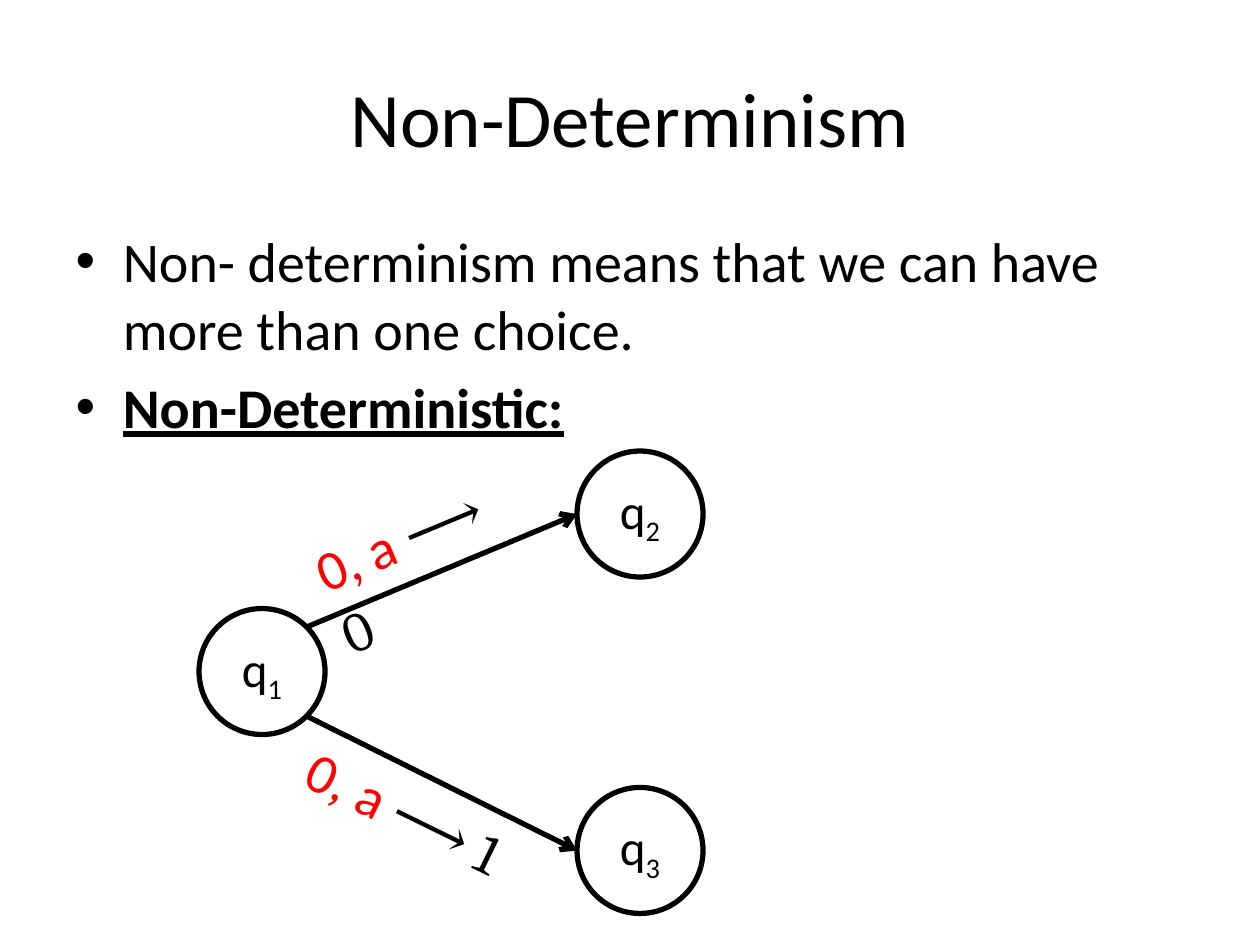
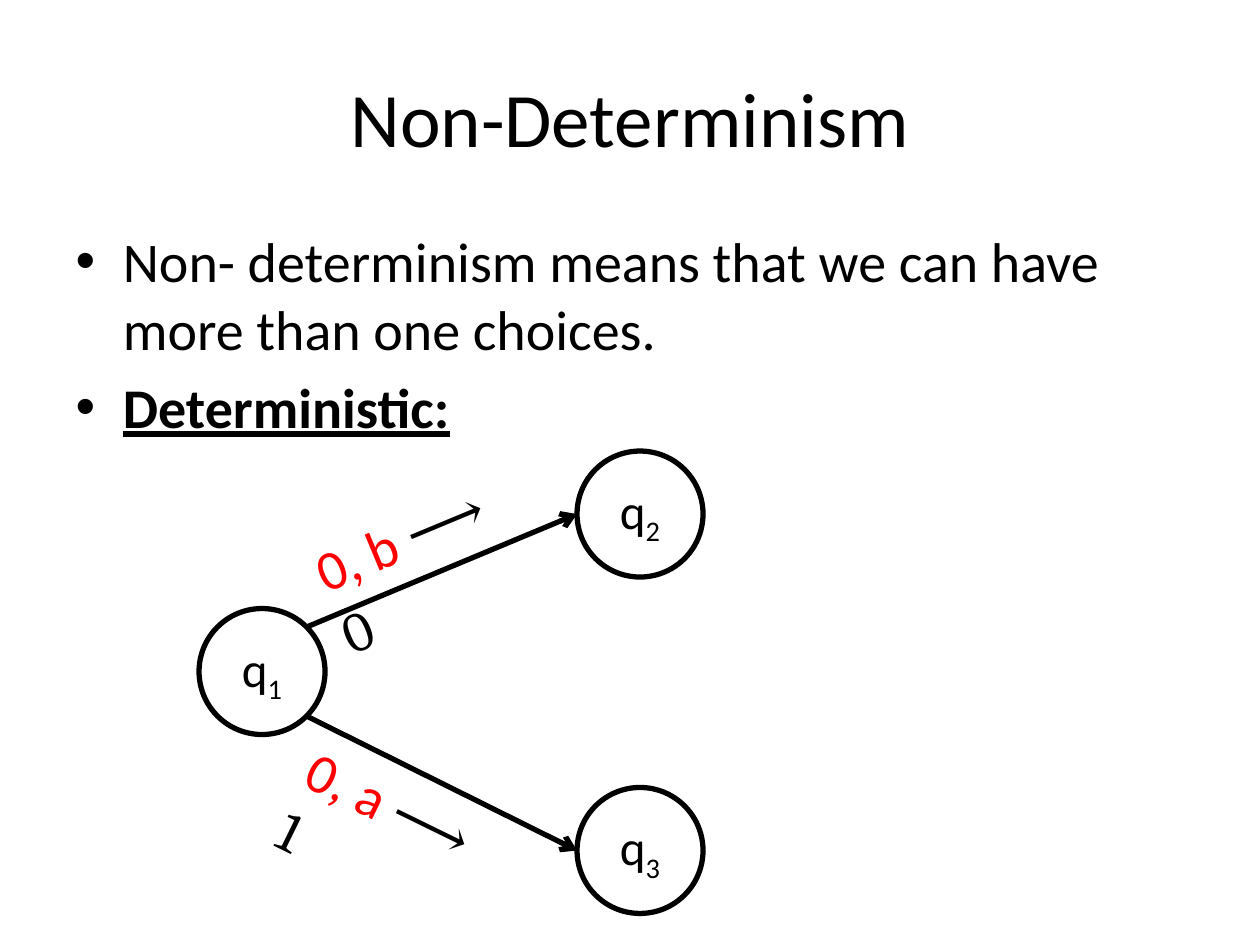
from math import sqrt

from lxml import etree
from pptx import Presentation
from pptx.dml.color import RGBColor
from pptx.enum.shapes import MSO_CONNECTOR, MSO_SHAPE
from pptx.enum.text import MSO_ANCHOR, PP_ALIGN
from pptx.oxml.ns import qn
from pptx.util import Inches, Pt

COLORS = {"ink": "000000", "input": "FF0000"}
BODY_FONT, SYMBOL_FONT = "Calibri", "Cambria"
TITLE_BOX = (0.5, 0.3, 9, 1.25)
BODY_BOX = (0.5, 1.75, 9, 4.95)
DIAGRAM_ORIGIN = (1.58, 3.58)
STATE_SIZE = 1
LINE_WIDTH = 3

# Offsets from the diagram's top left corner
STATES = {"1": (0, 1.25), "2": (3, 0), "3": (3, 2.67)}
LABEL_SIZE = (1.85, 0.64)
UPPER_LABEL = (0.78, 0.33, 337.4)
LOWER_LABEL = (0.71, 2.54, 26.1)


def rgb(name):
    return RGBColor.from_string(COLORS[name])


def style_run(r, size, color="ink", font=BODY_FONT):
    r.font.size = Pt(size)
    r.font.name = font
    r.font.color.rgb = rgb(color)


def place(sp, box):
    sp.left, sp.top, sp.width, sp.height = map(Inches, box)


def add_title(slide, text):
    sp = slide.shapes.title
    place(sp, TITLE_BOX)
    tf = sp.text_frame
    tf.text = text
    tf.vertical_anchor = MSO_ANCHOR.MIDDLE
    p = tf.paragraphs[0]
    p.alignment = PP_ALIGN.CENTER
    style_run(p.runs[0], 44)


def add_bullets(slide, definition, heading):
    sp = slide.placeholders[1]
    place(sp, BODY_BOX)
    tf = sp.text_frame
    tf.text = definition
    tf.add_paragraph().text = heading
    for p in tf.paragraphs:
        style_run(p.runs[0], 32)
    font = tf.paragraphs[1].runs[0].font
    font.bold = font.underline = True


def add_state(slide, left, top, number):
    sp = slide.shapes.add_shape(MSO_SHAPE.OVAL, Inches(left), Inches(top),
                                Inches(STATE_SIZE), Inches(STATE_SIZE))
    sp.shadow.inherit = False
    sp.fill.background()
    sp.line.color.rgb = rgb("ink")
    sp.line.width = Pt(LINE_WIDTH)
    tf = sp.text_frame
    tf.vertical_anchor = MSO_ANCHOR.MIDDLE
    p = tf.paragraphs[0]
    p.alignment = PP_ALIGN.CENTER
    for text in ("q", number):
        r = p.add_run()
        r.text = text
        style_run(r, 28)
    r.font._element.set("baseline", "-25000")


def add_arrow(slide, start, end):
    line = slide.shapes.add_connector(MSO_CONNECTOR.STRAIGHT,
                                      *map(Inches, (*start, *end)))
    line.line.color.rgb = rgb("ink")
    line.line.width = Pt(LINE_WIDTH)
    etree.SubElement(line.line._get_or_add_ln(), qn("a:tailEnd"), type="arrow")
    etree.SubElement(line._element.spPr, qn("a:effectLst"))


def add_transition_label(slide, left, top, rotation, symbols, output, wraps):
    """Write "symbols ⟶ output" along an arrow; wraps puts the output below."""
    sp = slide.shapes.add_textbox(*map(Inches, (left, top, *LABEL_SIZE)))
    sp.rotation = rotation
    tf = sp.text_frame
    tf.word_wrap = wraps
    if wraps:
        tf.margin_right = Inches(0.2)
    p = tf.paragraphs[0]
    for text, color, font in ((f"{symbols} ", "input", BODY_FONT),
                              (f"⟶ {output}", "ink", SYMBOL_FONT)):
        r = p.add_run()
        r.text = text
        style_run(r, 32, color, font)


def add_automaton(slide, left, top, upper, lower, lower_wraps):
    centers = {}
    radius = STATE_SIZE / 2
    for number, (dx, dy) in STATES.items():
        add_state(slide, left + dx, top + dy, number)
        centers[number] = (left + dx + radius, top + dy + radius)

    diagonal = radius / sqrt(2)
    x, y = centers["1"]
    for target, side in (("2", -1), ("3", 1)):
        end_x, end_y = centers[target]
        add_arrow(slide, (x + diagonal, y + side * diagonal),
                  (end_x - radius, end_y))

    for (dx, dy, rotation), symbols, output, wraps in (
            (UPPER_LABEL, upper, "0", True),
            (LOWER_LABEL, lower, "1", lower_wraps)):
        add_transition_label(slide, left + dx, top + dy, rotation,
                             symbols, output, wraps)


def add_automaton_slide(prs, definition, heading, upper, lower, lower_wraps):
    slide = prs.slides.add_slide(prs.slide_layouts[1])
    add_title(slide, "Non-Determinism")
    add_bullets(slide, definition, heading)
    add_automaton(slide, *DIAGRAM_ORIGIN, upper, lower, lower_wraps)


def main():
    prs = Presentation()
    prs.slide_width, prs.slide_height = Inches(10), Inches(7.5)
    definition = "Non- determinism means that we can have more than one "
    add_automaton_slide(prs, definition + "choice.", "Non-Deterministic:",
                        "0, a", "0, a", lower_wraps=False)
    add_automaton_slide(prs, definition + "choices.", "Deterministic:",
                        "0, b", "0, a", lower_wraps=True)
    prs.save("out.pptx")


if __name__ == "__main__":
    main()
